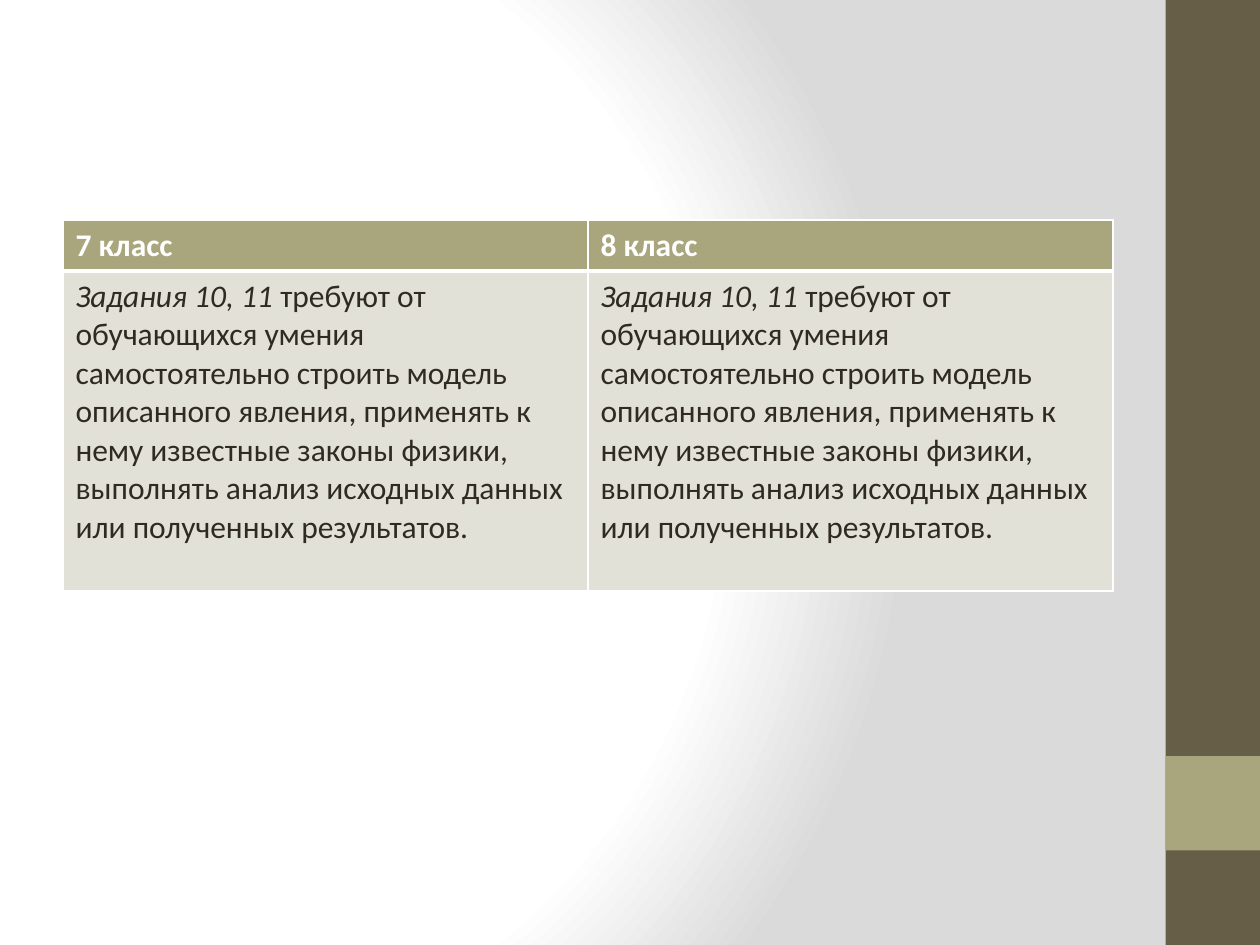
from lxml.etree import SubElement
from pptx import Presentation
from pptx.dml.color import RGBColor
from pptx.enum.shapes import MSO_SHAPE
from pptx.oxml import parse_xml
from pptx.oxml.ns import nsdecls, qn
from pptx.util import Emu, Pt

SCALE = 914400 / 126  # EMU in one px
WIDE, HIGH = 1260, 945
COLORS = {
    "white": "FFFFFF", "grey": "DADADA", "brown": "675E47",
    "olive": "A9A57C", "pale": "E2E1D7", "ink": "2F2B20",
}
BASE = {"name": "Calibri", "size": Pt(18)}
HEAD = {**BASE, "bold": True, "italic": False}
LEAD = {**BASE, "bold": False, "italic": True}
BODY = {**BASE, "bold": False, "italic": False}

TASK = [
    ("Задания 10, 11", LEAD),
    (" требуют от обучающихся умения самостоятельно строить модель "
     "описанного явления, применять к нему известные законы физики, "
     "выполнять анализ исходных данных или полученных результатов.", BODY),
]
CLASSES = ["7 класс", "8 класс"]


def px(num):
    return Emu(round(num * SCALE))


def rgb(name):
    return RGBColor.from_string(COLORS[name])


def set_back(slide):
    """Round gradient from white at the left to grey at the right."""
    stops = "".join(
        f'<a:gs pos="{pos * 1000}"><a:srgbClr val="{COLORS[name]}"/></a:gs>'
        for pos, name in [(0, "white"), (75, "white"), (100, "grey")])
    slide._element.cSld.insert(0, parse_xml(
        f'<p:bg {nsdecls("p", "a")}><p:bgPr><a:gradFill rotWithShape="1">'
        f'<a:gsLst>{stops}</a:gsLst><a:path path="circle">'
        '<a:fillToRect l="20000" t="50000" r="100000" b="50000"/></a:path>'
        '</a:gradFill><a:effectLst/></p:bgPr></p:bg>'))


def add_bar(slide, top, high, color):
    left = 1165.5  # 9.25 inches
    bar = slide.shapes.add_shape(
        MSO_SHAPE.RECTANGLE, px(left), px(top), px(WIDE - left), px(high))
    bar.shadow.inherit = False
    bar.fill.solid()
    bar.fill.fore_color.rgb = rgb(color)
    bar.line.fill.background()


def add_edges(cell, widths):
    props = cell._tc.get_or_add_tcPr()
    for side, width in zip("LRTB", widths):
        line = SubElement(props, qn(f"a:ln{side}"), w=str(Pt(width)))
        fill = SubElement(line, qn("a:solidFill"))
        SubElement(fill, qn("a:srgbClr"), val=COLORS["white"])


def fill_cell(cell, runs, ink, back, widths):
    add_edges(cell, widths)
    cell.fill.solid()
    cell.fill.fore_color.rgb = rgb(back)
    para = cell.text_frame.paragraphs[0]
    for text, form in runs:
        run = para.add_run()
        run.text = text
        for key, value in form.items():
            setattr(run.font, key, value)
        run.font.color.rgb = rgb(ink)


def add_grid(slide):
    rows = [51, 320]
    grid = slide.shapes.add_table(
        2, 2, px(63), px(220), px(1050), px(sum(rows))).table
    for row, high in zip(grid.rows, rows):
        row.height = px(high)
    for col, name in enumerate(CLASSES):
        fill_cell(grid.cell(0, col), [(name, HEAD)],
                  "white", "olive", (1, 1, 1, 3))
        fill_cell(grid.cell(1, col), TASK, "ink", "pale", (1, 1, 3, 1))


def main():
    deck = Presentation()
    deck.slide_width, deck.slide_height = px(WIDE), px(HIGH)
    slide = deck.slides.add_slide(deck.slide_layouts[6])
    set_back(slide)
    # Side band with its lighter square
    add_bar(slide, 0, HIGH, "brown")
    add_bar(slide, 756, 94.5, "olive")
    # Tasks by class
    add_grid(slide)
    deck.save("out.pptx")


if __name__ == "__main__":
    main()
